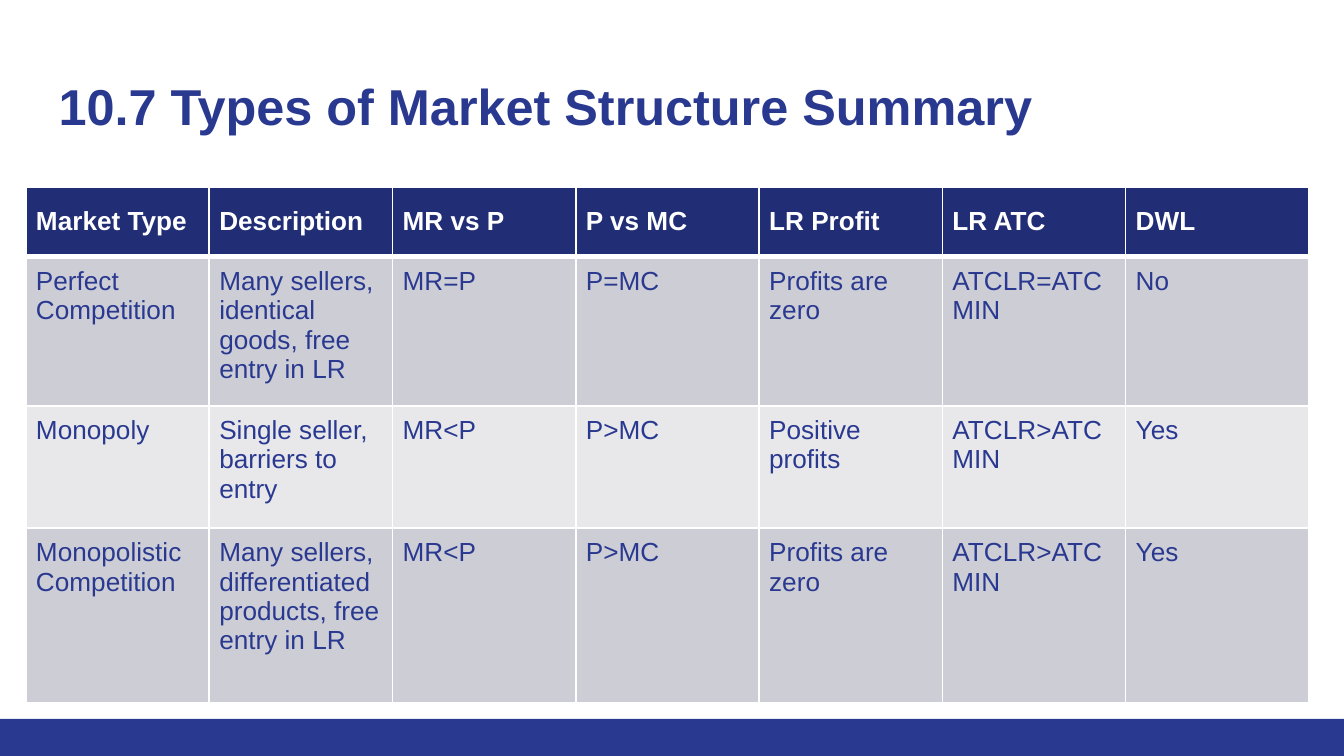
from typing import NamedTuple

from lxml import etree
from pptx import Presentation
from pptx.dml.color import RGBColor
from pptx.enum import shapes, text
from pptx.oxml import ns
from pptx.util import Cm, Pt

WHITE, BLUE, NAVY = "FFFFFF", "2A3990", "212D74"
DARK_BAND, LIGHT_BAND = "CDCDD6", "E8E8EB"
TOP, MIDDLE, BOTTOM = (text.MSO_ANCHOR.TOP, text.MSO_ANCHOR.MIDDLE,
                       text.MSO_ANCHOR.BOTTOM)
SLIDE_W, SLIDE_H = Cm(25.4), Cm(14.29)


class Market(NamedTuple):
    kind: str
    description: str
    mr_vs_p: str
    p_vs_mc: str
    lr_profit: str
    lr_atc: str
    dwl: str
    height: float


HEADER = Market("Market Type", "Description", "MR vs P", "P vs MC",
                "LR Profit", "LR ATC", "DWL", 1.32)
MARKETS = [
    Market("Perfect Competition",
           "Many sellers, identical goods, free entry in LR",
           "MR=P", "P=MC", "Profits are zero", "ATCLR=ATCMIN", "No", 2.82),
    Market("Monopoly", "Single seller, barriers to entry",
           "MR<P", "P>MC", "Positive profits", "ATCLR>ATCMIN", "Yes", 2.31),
    Market("Monopolistic Competition",
           "Many sellers, differentiated products, free entry in LR",
           "MR<P", "P>MC", "Profits are zero", "ATCLR>ATCMIN", "Yes", 3.31),
]


def paint(fill, color: str) -> None:
    fill.solid()
    fill.fore_color.rgb = RGBColor.from_string(color)


def write(tf, words: str, *, size: float, color: str, bold: bool = False) -> None:
    tf.word_wrap = True
    r = tf.paragraphs[0].add_run()
    r.text = words
    r.font.name, r.font.size, r.font.bold = "Arial", Pt(size), bold
    r.font.color.rgb = RGBColor.from_string(color)


def set_borders(cell, top: float, bottom: float) -> None:
    """Draw white borders, 1 pt at the sides; top and bottom are in points."""
    tc_pr = cell._tc.get_or_add_tcPr()
    widths = {"lnL": 1, "lnR": 1, "lnT": top, "lnB": bottom}
    for i, (side, width) in enumerate(widths.items()):
        ln = etree.Element(ns.qn(f"a:{side}"), w=str(Pt(width)))
        fill = etree.SubElement(ln, ns.qn("a:solidFill"))
        etree.SubElement(fill, ns.qn("a:srgbClr"), val=WHITE)
        tc_pr.insert(i, ln)


def add_footer_bar(s) -> None:
    height = Cm(0.7)
    bar = s.shapes.add_shape(shapes.MSO_SHAPE.RECTANGLE, 0, SLIDE_H - height,
                             SLIDE_W, height)
    bar.shadow.inherit = False
    paint(bar.fill, BLUE)
    bar.line.fill.background()


def add_title(s, words: str) -> None:
    tf = s.shapes.add_textbox(Cm(0.86), Cm(1.14), Cm(23.67), Cm(1.68)).text_frame
    tf.margin_left = tf.margin_right = tf.margin_top = tf.margin_bottom = Cm(0.25)
    tf.vertical_anchor = BOTTOM
    write(tf, words, size=27, color=BLUE, bold=True)


def add_market_table(s) -> None:
    rows = [HEADER, *MARKETS]
    n_cols = len(HEADER) - 1
    table = s.shapes.add_table(len(rows), n_cols, Cm(0.49), Cm(3.53), Cm(24.25),
                               Cm(sum(row.height for row in rows))).table
    for col in table.columns:
        col.width = Cm(24.25 / n_cols)
    for i, row in enumerate(rows):
        table.rows[i].height = Cm(row.height)
        header = i == 0
        band = DARK_BAND if i % 2 else LIGHT_BAND
        for j, words in enumerate(row[:n_cols]):
            cell = table.cell(i, j)
            cell.margin_left = cell.margin_right = Cm(0.19)
            cell.margin_top = cell.margin_bottom = Cm(0.19)
            cell.vertical_anchor = MIDDLE if header else TOP
            paint(cell.fill, NAVY if header else band)
            set_borders(cell, top=3 if i == 1 else 1, bottom=3 if header else 1)
            write(cell.text_frame, words, size=14, bold=header,
                  color=WHITE if header else BLUE)


def main() -> None:
    prs = Presentation()
    prs.slide_width, prs.slide_height = SLIDE_W, SLIDE_H
    s = prs.slides.add_slide(prs.slide_layouts[6])
    paint(s.background.fill, WHITE)
    add_footer_bar(s)
    add_title(s, "10.7 Types of Market Structure Summary")
    add_market_table(s)
    prs.save("out.pptx")


if __name__ == "__main__":
    main()
